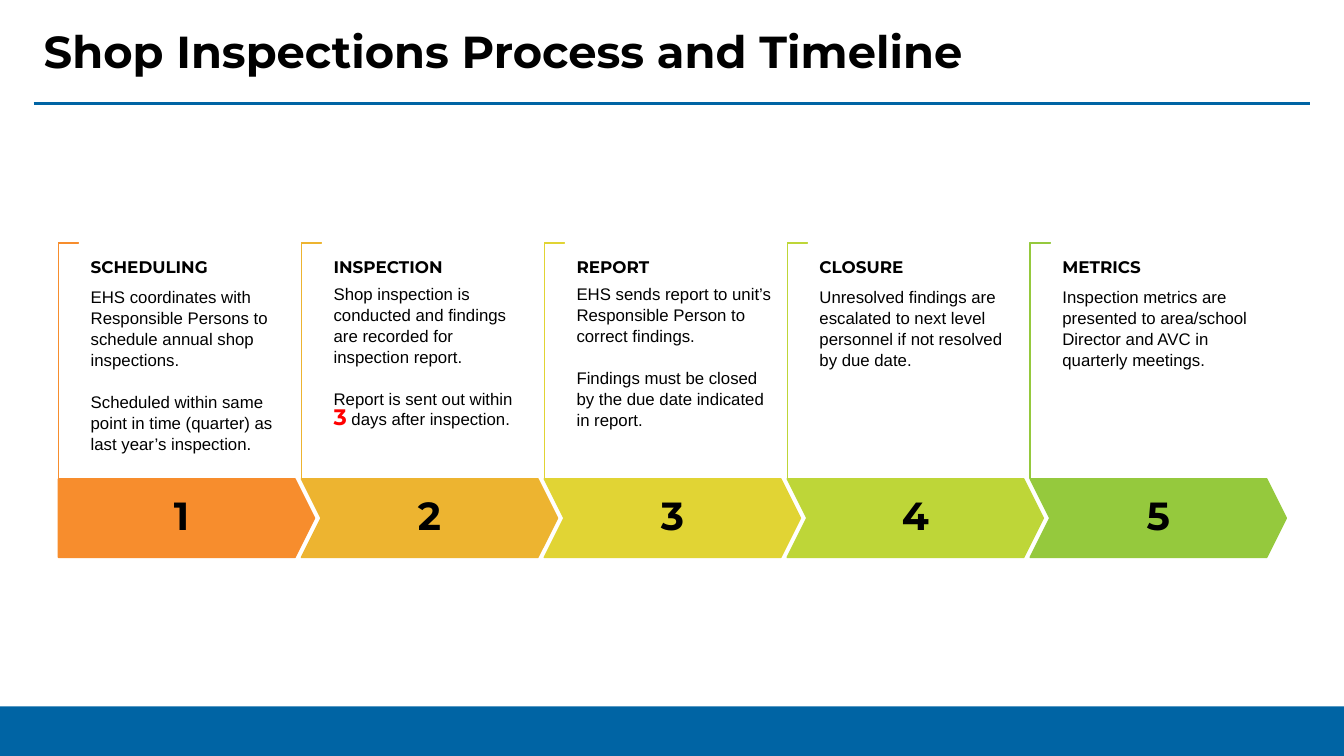
from pptx import Presentation
from pptx.dml.color import RGBColor
from pptx.enum.shapes import MSO_CONNECTOR, MSO_SHAPE as SHAPE
from pptx.enum.text import MSO_ANCHOR as ANCHOR, PP_ALIGN as ALIGN
from pptx.oxml.ns import qn
from pptx.util import Inches, Pt
from lxml import etree

# Slide grid: 160 columns by 90 rows of square cells
COLUMNS, ROWS = 160, 90
COLORS = {"blue": "0064A4", "black": "000000", "white": "FFFFFF", "red": "FF0000"}
HEAD_FONT, BODY_FONT = "Montserrat", "Arial"

STEP_LEFT, STEP_PITCH = 6.96, 28.92
BRACKET_TOP, BRACKET_HEIGHT, BRACKET_WIDTH = 28.9, 28.1, 2.4
ARROW_TOP, ARROW_WIDTH, ARROW_HEIGHT = 57, 30.5, 9.36

# Heading, space after it, colour, body paragraphs; a "*" encloses a highlight
STEPS = [
    ("SCHEDULING", 6, "F78D2D", [
        "EHS coordinates with Responsible Persons to schedule annual shop inspections.",
        "Scheduled within same point in time (quarter) as last year’s inspection."]),
    ("INSPECTION", 4.2, "EDB430", [
        "Shop inspection is conducted and findings are recorded for inspection report.",
        "Report is sent out within *3* days after inspection."]),
    ("REPORT", 4.2, "E1D434", [
        "EHS sends report to unit’s Responsible Person to correct findings.",
        "Findings must be closed by the due date indicated in report."]),
    ("CLOSURE", 6, "BED638", [
        "Unresolved findings are escalated to next level personnel "
        "if not resolved by due date."]),
    ("METRICS", 6, "95C93D", [
        "Inspection metrics are presented to area/school Director and AVC "
        "in quarterly meetings."]),
]


def cells(n):
    return Inches(n / 12)


def rgb(color):
    return RGBColor.from_string(COLORS.get(color, color))


def add_shape(s, kind, box, fill, line=None, adjustments=()):
    sp = s.shapes.add_shape(kind, *map(cells, box))
    sp.shadow.inherit = False
    sp.fill.solid()
    sp.fill.fore_color.rgb = rgb(fill)
    if line:
        sp.line.color.rgb = rgb(line)
        sp.line.width = Pt(1)
    else:
        sp.line.fill.background()
    for i, value in enumerate(adjustments):
        sp.adjustments[i] = value
    return sp


def add_rule(s, left, right, y):
    rule = s.shapes.add_connector(MSO_CONNECTOR.STRAIGHT, *map(cells, (left, y, right, y)))
    rule.line.color.rgb = rgb("blue")
    rule.line.width = Pt(2.25)
    etree.SubElement(rule._element.spPr, qn("a:effectLst"))


def add_frame(s, box, anchor=ANCHOR.TOP, margins=(0, 0, 0, 0)):
    tf = s.shapes.add_textbox(*map(cells, box)).text_frame
    tf.word_wrap = True
    tf.vertical_anchor = anchor
    tf.margin_left, tf.margin_top, tf.margin_right, tf.margin_bottom = map(cells, margins)
    return tf


def write(tf, text, size=12, font=BODY_FONT, bold=False, align=ALIGN.LEFT,
          spacing=0.9, before=0, after=0):
    """Fill the empty first paragraph or append one; *text* is highlighted."""
    p = tf.paragraphs[0] if not tf.text else tf.add_paragraph()
    p.alignment, p.line_spacing = align, spacing
    p.space_before, p.space_after = Pt(before), Pt(after)
    for i, part in enumerate(text.split("*")):
        marked = i % 2 == 1
        r = p.add_run()
        r.text = part
        r.font.name = HEAD_FONT if marked else font
        r.font.size = Pt(16 if marked else size)
        r.font.bold = marked or bold
        r.font.color.rgb = rgb("red" if marked else "black")


def add_bracket(s, x, color):
    """Thin corner, turned so that its arms run along the top and the left."""
    left = x + (BRACKET_WIDTH - BRACKET_HEIGHT) / 2
    top = BRACKET_TOP + (BRACKET_HEIGHT - BRACKET_WIDTH) / 2
    bracket = add_shape(s, SHAPE.CORNER, (left, top, BRACKET_HEIGHT, BRACKET_WIDTH),
                        "white", color, (0.01, 0.01))
    bracket.rotation = 90


def add_arrow(s, x, number, color):
    first = number == 1
    box = (x, ARROW_TOP, ARROW_WIDTH, ARROW_HEIGHT)
    add_shape(s, SHAPE.PENTAGON if first else SHAPE.CHEVRON, box, color, color, (0.25,))
    label_width = ARROW_WIDTH - (1.2 if first else 0)
    tf = add_frame(s, (x, ARROW_TOP, label_width, ARROW_HEIGHT), ANCHOR.MIDDLE)
    write(tf, str(number), size=28, font=HEAD_FONT, bold=True, align=ALIGN.CENTER)


def add_step(s, number, heading, after, color, body):
    x = STEP_LEFT + (number - 1) * STEP_PITCH
    add_bracket(s, x, color)
    add_arrow(s, x, number, color)
    tf = add_frame(s, (x + BRACKET_WIDTH, 30.5, 24.7, 19.6), margins=(1.44, 0, 0, 0))
    write(tf, heading, font=HEAD_FONT, bold=True, spacing=Pt(15), after=after)
    for i, text in enumerate(body):
        write(tf, text, spacing=Pt(15), before=15 * i)


def main():
    prs = Presentation()
    prs.slide_width, prs.slide_height = cells(COLUMNS), cells(ROWS)
    s = prs.slides.add_slide(prs.slide_layouts[6])

    add_rule(s, 4, COLUMNS - 4, 12.36)
    add_shape(s, SHAPE.RECTANGLE, (0, 84.1, COLUMNS, 5.9), "blue")
    title = add_frame(s, (4, 0.6, COLUMNS - 8, 11.76), ANCHOR.MIDDLE, (1.2, 0.6, 1.2, 0.6))
    write(title, "Shop Inspections Process and Timeline", size=32, font=HEAD_FONT, bold=True)
    for number, step in enumerate(STEPS, start=1):
        add_step(s, number, *step)

    prs.save("out.pptx")


if __name__ == "__main__":
    main()
